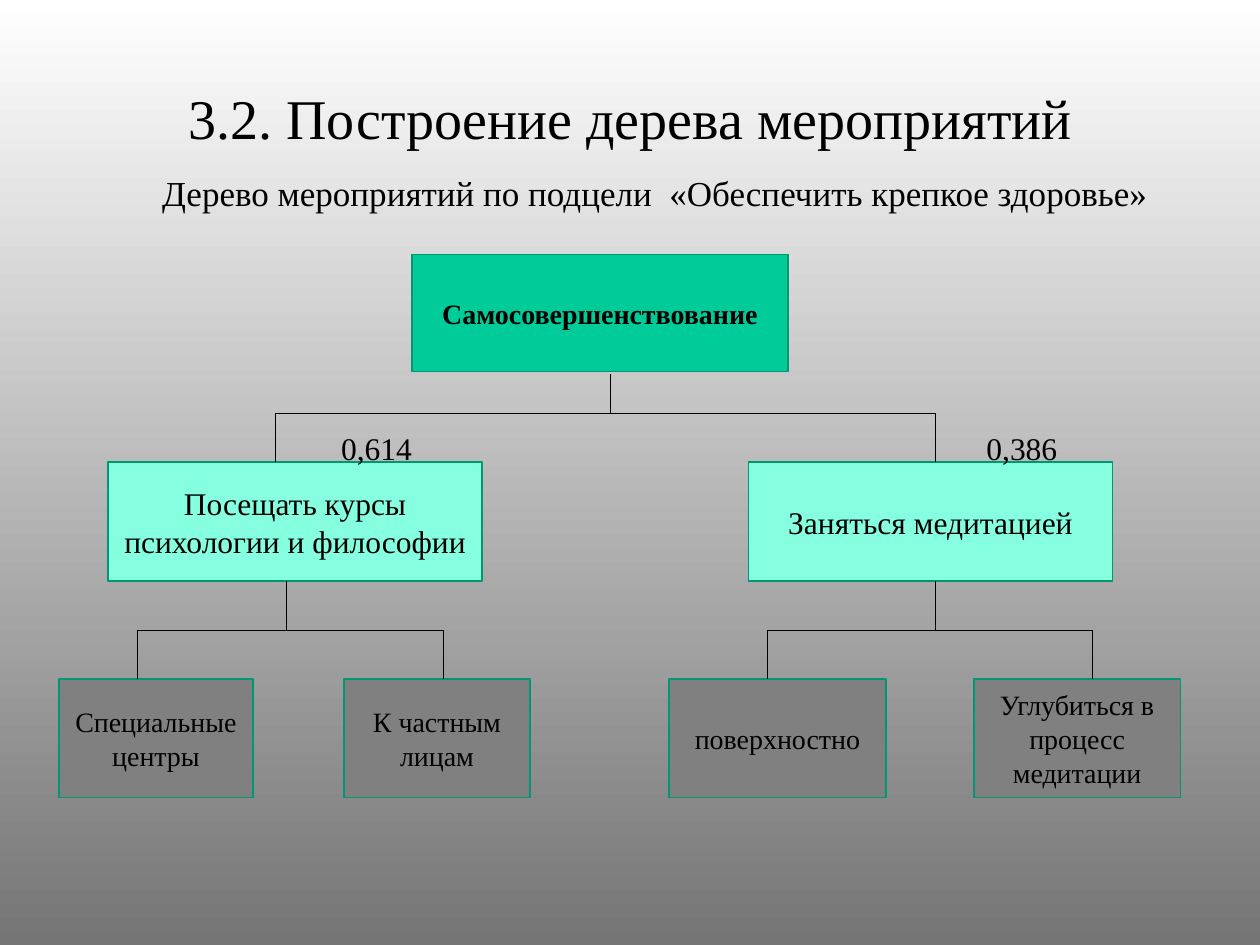
from dataclasses import dataclass

from pptx import Presentation
from pptx.dml.color import RGBColor as Rgb
from pptx.enum.shapes import MSO_CONNECTOR as Connector, MSO_SHAPE as Shape
from pptx.enum.text import MSO_ANCHOR as Anchor, MSO_AUTO_SIZE as AutoSize, PP_ALIGN as Align
from pptx.oxml.ns import qn
from pptx.util import Cm, Pt


@dataclass(frozen=True)
class Theme:
    """Colours, font and type sizes of the deck."""

    font: str = "Times New Roman"
    ink: str = "000000"
    sky: str = "FFFFFF"
    ground: str = "757575"
    root: str = "00CC99"
    branch: str = "85FFE0"
    leaf: str = "808080"
    border: str = "009771"
    title: int = 32
    subtitle: int = 20
    body: int = 18
    small: int = 16
    border_width: float = 1
    line_width: float = 0.5


def assign(target, formats):
    """Set every attribute named in formats on the target."""
    for name, value in formats.items():
        setattr(target, name, value)


class TreePage:
    """Draws the elements of a tree diagram on one page."""

    def __init__(self, deck, theme):
        """Add a title-only page with a vertical gradient background."""
        self.theme = theme
        self.page = deck.slides.add_slide(deck.slide_layouts[5])
        fill = self.page.background.fill
        fill.gradient()
        fill.gradient_angle = 270
        for stop, colour in zip(fill.gradient_stops, (theme.sky, theme.ground)):
            stop.color.rgb = Rgb.from_string(colour)

    def set_text(self, box, text, size, bold=False, inset=0.13):
        """Put centred text into a box."""
        frame = box.text_frame
        assign(frame, {
            "word_wrap": True, "auto_size": AutoSize.NONE, "vertical_anchor": Anchor.MIDDLE,
            "margin_top": Cm(inset), "margin_bottom": Cm(inset),
        })
        para = frame.paragraphs[0]
        para.alignment = Align.CENTER
        span = para.add_run()
        span.text = text
        assign(span.font, {"name": self.theme.font, "size": Pt(size), "bold": bold})
        span.font.color.rgb = Rgb.from_string(self.theme.ink)

    def title(self, text, left, top, width, height):
        """Place and fill the title placeholder."""
        box = self.page.shapes.title
        assign(box, {"left": Cm(left), "top": Cm(top), "width": Cm(width), "height": Cm(height)})
        self.set_text(box, text, self.theme.title)

    def label(self, text, left, top, width, height, size, inset=0.13):
        """Add a text box."""
        box = self.page.shapes.add_textbox(Cm(left), Cm(top), Cm(width), Cm(height))
        self.set_text(box, text, size, inset=inset)

    def node(self, text, left, top, width, height, colour, size, bold=False):
        """Add a bordered rectangle with text."""
        box = self.page.shapes.add_shape(
            Shape.RECTANGLE, Cm(left), Cm(top), Cm(width), Cm(height))
        box.shadow.inherit = False
        box.fill.solid()
        box.fill.fore_color.rgb = Rgb.from_string(colour)
        box.line.color.rgb = Rgb.from_string(self.theme.border)
        box.line.width = Pt(self.theme.border_width)
        self.set_text(box, text, size, bold)

    def line(self, *ends):
        """Add a thin straight line."""
        link = self.page.shapes.add_connector(Connector.STRAIGHT, *map(Cm, ends))
        link.line.color.rgb = Rgb.from_string(self.theme.ink)
        link.line.width = Pt(self.theme.line_width)
        properties = link._element.spPr
        properties.append(properties.makeelement(qn("a:effectLst"), {}))

    def fork(self, stem, top, bar, bottom, drops):
        """Join a parent to its children by a stem, a bar and drops."""
        self.line(drops[0], bar, drops[-1], bar)
        self.line(stem, top, stem, bar)
        for drop in drops:
            self.line(drop, bar, drop, bottom)


def main():
    """Build the slide and save it."""
    deck = Presentation()
    assign(deck, {"slide_width": Cm(25.4), "slide_height": Cm(19.05)})
    theme = Theme()
    tree = TreePage(deck, theme)

    tree.title("3.2. Построение дерева мероприятий ", 0.79, 1.19, 24.13, 2.34)
    tree.node("Самосовершенствование", 8.31, 5.13, 7.57, 2.36, theme.root, theme.small, bold=True)

    branch_top, leaf_top, height = 9.32, 13.69, 2.39
    branches = (
        ("Посещать курсы психологии и философии", 2.18, 7.54),
        ("Заняться медитацией", 15.09, 7.34),
    )
    leaves = (
        ("Специальные центры", 1.19, 3.91),
        ("К частным лицам", 6.93, 3.76),
        ("поверхностно", 13.49, 4.37),
        ("Углубиться в процесс медитации", 19.63, 4.17),
    )
    levels = (
        (branches, branch_top, theme.branch, theme.body),
        (leaves, leaf_top, theme.leaf, theme.small),
    )
    for nodes, top, colour, size in levels:
        for text, left, width in nodes:
            tree.node(text, left, top, width, height, colour, size)

    tree.fork(12.3, 7.54, 8.33, branch_top, (5.56, 18.85))
    for stem, drops in ((5.77, (2.78, 8.94)), (18.85, (15.47, 22.02))):
        tree.fork(stem, branch_top + height, 12.7, leaf_top, drops)

    tree.label("Дерево мероприятий по подцели  «Обеспечить крепкое здоровье»",
               2.59, 3.18, 21.23, 1.4, theme.subtitle)
    for weight, left in (("0,614", 6.5), ("0,386", 19.51)):
        tree.label(weight, left, 8.74, 2.18, 0.58, theme.body, inset=0)

    deck.save("out.pptx")


if __name__ == "__main__":
    main()
